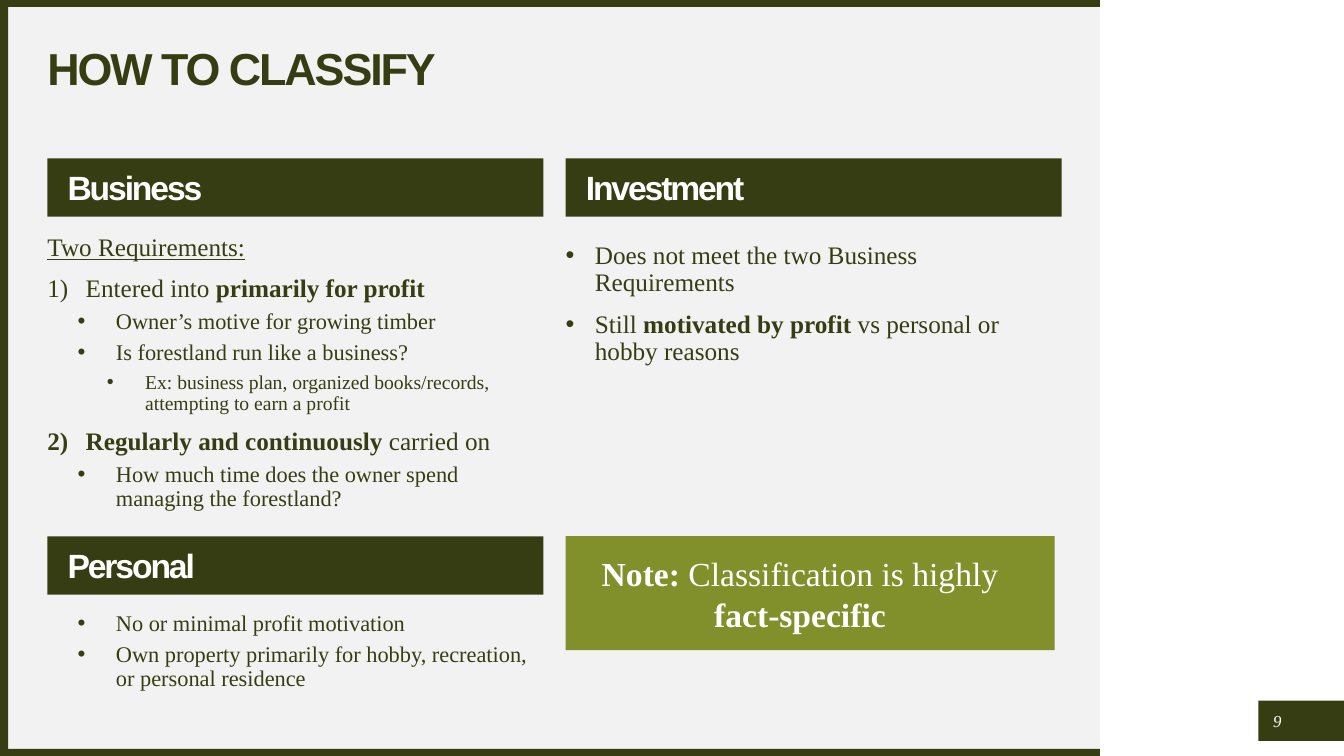
from lxml.etree import SubElement
from pptx import Presentation
from pptx.dml.color import RGBColor
from pptx.enum.shapes import MSO_SHAPE
from pptx.enum.text import MSO_ANCHOR, MSO_AUTO_SIZE, PP_ALIGN
from pptx.oxml.ns import qn
from pptx.util import Inches, Pt

WIDE, HIGH = 13.33, 7.5
DARK, LIGHT, GREEN, WHITE = "373D12", "F2F2F2", "82902B", "FFFFFF"
HEAD, BODY = "Arial", "Times New Roman"

# Grid: two columns with a gap; the rows are the tops of the bands
LEFT, SPAN, GAP = 0.47, 4.92, 0.22
COLS = [LEFT + i * (SPAN + GAP) for i in range(2)]
TOP, LOW, BAND, EDGE, PANEL = 1.57, 5.32, 0.58, 0.07, 10.91

# Per list level: size, left indent, space before
LEVELS = [(18, 0.38, 10), (16, 0.68, 5), (14, 0.97, 5)]

# Each item: level, mark, text (bold parts between stars)
TESTS = [
    (0, "", "Two Requirements:"),
    (0, "1)", "Entered into *primarily for profit*"),
    (1, "•", "Owner’s motive for growing timber"),
    (1, "•", "Is forestland run like a business?"),
    (2, "•", "Ex: business plan, organized books/records, attempting to earn a profit"),
    (0, "1)", "*Regularly and continuously* carried on"),
    (1, "•", "How much time does the owner spend managing the forestland?"),
    (1, "•", "No or minimal profit motivation"),
    (1, "•", "Own property primarily for hobby, recreation, or personal residence"),
]
HOBBY, SKIP = 7, 72  # the item below the Personal band, and its space before
GAINS = [
    (0, "•", "Does not meet the two Business Requirements"),
    (0, "•", "Still *motivated by profit* vs personal or hobby reasons"),
]


def color(code):
    return RGBColor.from_string(code)


def paint(shape, fill):
    shape.fill.solid()
    shape.fill.fore_color.rgb = color(fill)
    shape.line.fill.background()


def place(shape, x, y, w, h):
    shape.left, shape.top, shape.width, shape.height = map(Inches, (x, y, w, h))


def block(slide, x, y, w, h, fill):
    shape = slide.shapes.add_shape(MSO_SHAPE.RECTANGLE, *map(Inches, (x, y, w, h)))
    shape.shadow.inherit = False
    paint(shape, fill)
    return shape


def frame(shape, pads=(0, 0, 0, 0), anchor=MSO_ANCHOR.TOP):
    text = shape.text_frame
    text.word_wrap = True
    text.auto_size = MSO_AUTO_SIZE.NONE
    text.vertical_anchor = anchor
    (text.margin_left, text.margin_top,
     text.margin_right, text.margin_bottom) = map(Inches, pads)
    return text


def style(para, face, size, ink, bold=None, tight=False):
    font = para.font
    font.name, font.size, font.bold = face, Pt(size), bold
    font.color.rgb = color(ink)
    if tight:
        for run in para.runs:
            run.font._element.set("spc", "-150")


def write(para, words):
    """Add runs; every second part between stars is bold."""
    for i, part in enumerate(words.split("*")):
        if part:
            run = para.add_run()
            run.text = part
            if "*" in words:
                run.font.bold = i % 2 == 1


def title(shape, words, size, ink):
    para = shape.text_frame.paragraphs[0]
    write(para, words)
    para.alignment, para.line_spacing = PP_ALIGN.LEFT, 0.9
    para.space_before = Pt(0)
    style(para, HEAD, size, ink, True, True)


def band(shape, x, y, words):
    place(shape, x, y, SPAN, BAND)
    paint(shape, DARK)
    frame(shape, (0.2, 0.04, 0, 0), MSO_ANCHOR.MIDDLE)
    title(shape, words, 24, WHITE)


def mark(para, sign, left, hang):
    props = para._p.get_or_add_pPr()
    props.set("marL", str(Inches(left)))
    props.set("indent", str(-Inches(hang)))
    if not sign:
        SubElement(props, qn("a:buNone"))
    elif sign == "•":
        SubElement(props, qn("a:buFont")).set("typeface", HEAD)
        SubElement(props, qn("a:buChar")).set("char", sign)
    else:
        SubElement(props, qn("a:buFont")).set("typeface", "+mj-lt")
        SubElement(props, qn("a:buAutoNum")).set("type", "arabicParenR")


def bullets(shape, items, hang):
    text = frame(shape)
    for i, (level, sign, words) in enumerate(items):
        para = text.add_paragraph() if i else text.paragraphs[0]
        size, left, before = LEVELS[level]
        para.level, para.line_spacing = level, 0.9
        para.space_before = Pt(before if i else 0)
        mark(para, sign, left - LEVELS[0][1] + hang if sign else 0, hang if sign else 0)
        write(para, words)
        style(para, BODY, size, DARK)


def label(slide, x, y, w, h, words, size, pads, anchor):
    box = slide.shapes.add_textbox(*map(Inches, (x, y, w, h)))
    para = frame(box, pads, anchor).paragraphs[0]
    write(para, words)
    para.alignment = PP_ALIGN.CENTER
    style(para, BODY, size, WHITE)
    return para


def main():
    deck = Presentation()
    deck.slide_width, deck.slide_height = Inches(WIDE), Inches(HIGH)
    slide = deck.slides.add_slide(deck.slide_layouts[4])
    head, left, tests, right, gains = holders = list(slide.placeholders)

    # Panel with its dark edges, and the page tab
    block(slide, 0, 0, PANEL, HIGH, LIGHT)
    for y in (0, HIGH - EDGE):
        block(slide, 0, y, PANEL, EDGE, DARK)
    block(slide, 0, 0, 0.08, HIGH, DARK)
    block(slide, 12.48, 6.95, WIDE - 12.48, 0.4, DARK)
    for holder in holders:  # bring the text in front of the panel
        slide.shapes._spTree.append(holder._element)

    # Title and bands
    place(head, LEFT, LEFT, 2 * SPAN + GAP, 0.47)
    frame(head, anchor=MSO_ANCHOR.MIDDLE)
    title(head, "HOW TO CLASSIFY", 32, DARK)
    band(left, COLS[0], TOP, "Business")
    band(right, COLS[1], TOP, "Investment")

    # Lists
    place(tests, COLS[0], 2.33, SPAN, 4.56)
    bullets(tests, TESTS, 0.38)
    lines = tests.text_frame.paragraphs
    lines[0].font.underline = True
    lines[HOBBY].space_before = Pt(SKIP)
    place(gains, COLS[1], 2.41, SPAN, 1.71)
    bullets(gains, GAINS, 0.29)
    band(block(slide, COLS[0], LOW, SPAN, BAND, DARK), COLS[0], LOW, "Personal")

    # Note and page number
    block(slide, COLS[1], LOW, 4.85, 1.13, GREEN)
    label(slide, COLS[1] - 0.1, 5.44, 4.85, 1.21,
          "*Note: *Classification is highly *fact-specific*", 24,
          (0.1, 0.05, 0.1, 0.05), MSO_ANCHOR.TOP)
    page = label(slide, 12.52, 7, 0.3, 0.3, "9", 12, (0, 0, 0, 0), MSO_ANCHOR.MIDDLE)
    page.font.italic = True

    deck.save("out.pptx")


if __name__ == "__main__":
    main()
